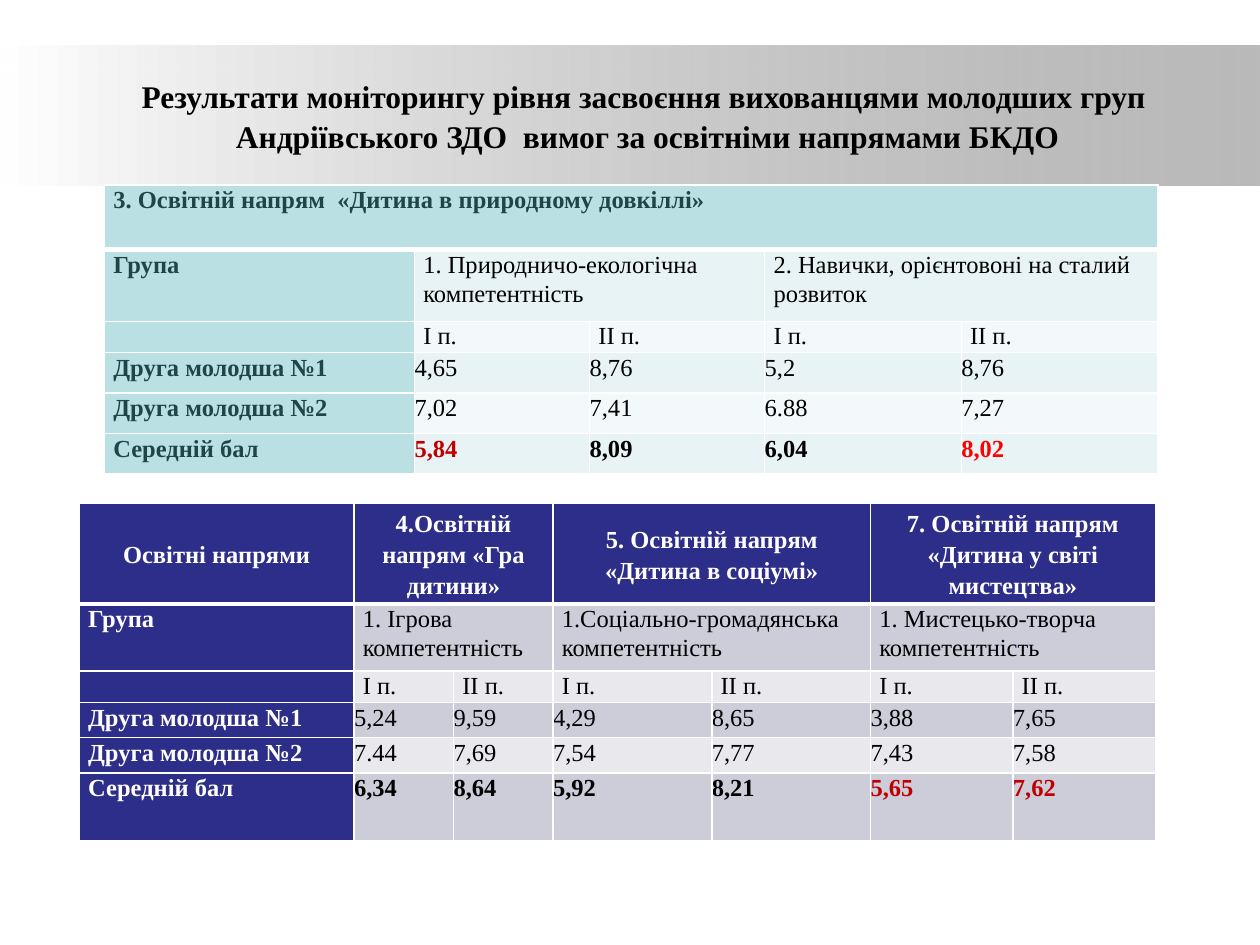
from dataclasses import dataclass

import pptx
import pptx.dml.color
import pptx.enum.shapes
import pptx.enum.text
import pptx.oxml.ns
import pptx.util
from lxml import etree
from pptx.dml.color import RGBColor
from pptx.util import Inches, Pt

FONT = "Times New Roman"
WHITE = RGBColor(0xFF, 0xFF, 0xFF)
BLACK = RGBColor(0x00, 0x00, 0x00)
GRAY = RGBColor(0x80, 0x80, 0x80)
DARK_RED = RGBColor(0xC0, 0x00, 0x00)
RED = RGBColor(0xFF, 0x00, 0x00)
TEAL = RGBColor(0xBB, 0xE0, 0xE3)
DARK_TEAL = RGBColor(0x1E, 0x46, 0x49)
NAVY = RGBColor(0x2D, 0x2D, 0x8A)

TITLE = ("Результати моніторингу рівня засвоєння вихованцями молодших груп \v"
         "Андріївського ЗДО  вимог за освітніми напрямами БКДО")
TERMS = ["І п.", "ІІ п."]
FIRST_GROUP, SECOND_GROUP, AVERAGE = "Друга молодша №1", "Друга молодша №2", "Середній бал"
FIRST_SCORE_ROW = 3

# None continues the cell to its left
NATURE_ROWS = [
    ["3. Освітній напрям  «Дитина в природному довкіллі»", None, None, None, None],
    ["Група", "1. Природничо-екологічна  компетентність", None,
     "2. Навички, орієнтовоні на сталий розвиток", None],
    ["", *TERMS * 2],
    [FIRST_GROUP, "4,65", "8,76", "5,2", "8,76"],
    [SECOND_GROUP, "7,02", "7,41", "6.88", "7,27"],
    [AVERAGE, "5,84", "8,09", "6,04", "8,02"],
]
AREAS_ROWS = [
    ["Освітні напрями", "4.Освітній напрям «Гра дитини»", None,
     "5. Освітній напрям «Дитина в соціумі»", None,
     "7. Освітній напрям «Дитина у світі мистецтва»", None],
    ["Група", "1. Ігрова  компетентність", None,
     "1.Соціально-громадянська компетентність", None,
     "1. Мистецько-творча компетентність", None],
    ["", *TERMS * 3],
    [FIRST_GROUP, "5,24", "9,59", "4,29", "8,65", "3,88", "7,65"],
    [SECOND_GROUP, "7.44", "7,69", "7,54", "7,77", "7,43", "7,58"],
    [AVERAGE, "6,34", "8,64", "5,92", "8,21", "5,65", "7,62"],
]


@dataclass
class Palette:
    heading: RGBColor
    heading_text: RGBColor
    bands: tuple
    average_colors: dict  # column -> highlighted average


NATURE_PALETTE = Palette(TEAL, DARK_TEAL,
                         (RGBColor(0xF3, 0xF9, 0xFA), RGBColor(0xE7, 0xF3, 0xF4)),
                         {1: DARK_RED, 4: RED})
AREAS_PALETTE = Palette(NAVY, WHITE,
                        (RGBColor(0xE8, 0xE8, 0xED), RGBColor(0xCD, 0xCD, 0xDA)),
                        {5: DARK_RED, 6: DARK_RED})


def add_title_band(slide):
    band = slide.shapes.add_shape(pptx.enum.shapes.MSO_SHAPE.RECTANGLE,
                                  0, Inches(0.36), Inches(10), Inches(1.11))
    band.shadow.inherit = False
    band.line.fill.background()
    band.fill.gradient()
    band.fill.gradient_angle = 0
    for stop, color in zip(band.fill.gradient_stops, (WHITE, GRAY)):
        stop.color.rgb = color
    # The gray end is partly transparent
    gray_end = band._element.spPr.findall(".//" + pptx.oxml.ns.qn("a:srgbClr"))[-1]
    etree.SubElement(gray_end, pptx.oxml.ns.qn("a:alpha"), val="54000")


def style_paragraph(paragraph, size, color, bold, line_spacing=1.07, space_after=8):
    paragraph.line_spacing = line_spacing
    paragraph.space_after = Pt(space_after)
    font = paragraph.font
    font.name, font.size, font.bold = FONT, Pt(size), bold
    font.color.rgb = color


def add_title(slide):
    title = slide.shapes.add_textbox(Inches(0.28), Inches(0.44), Inches(9.72), Inches(0.94))
    frame = title.text_frame
    frame.word_wrap = True
    frame.vertical_anchor = pptx.enum.text.MSO_ANCHOR.MIDDLE
    frame.text = TITLE
    frame.paragraphs[0].alignment = pptx.enum.text.PP_ALIGN.CENTER
    style_paragraph(frame.paragraphs[0], 18, BLACK, True)


def set_borders(cell, row):
    """White grid, with a thicker line under the heading row."""
    widths = {"L": 1, "R": 1, "T": 3 if row == 1 else 1, "B": 3 if row == 0 else 1}
    properties = cell._tc.get_or_add_tcPr()
    for index, (side, width) in enumerate(widths.items()):
        line = etree.Element(pptx.oxml.ns.qn("a:ln" + side), w=str(Pt(width)))
        fill = etree.SubElement(line, pptx.oxml.ns.qn("a:solidFill"))
        etree.SubElement(fill, pptx.oxml.ns.qn("a:srgbClr"), val=str(WHITE))
        properties.insert(index, line)


def fill_cell(cell, text, row, column, palette, is_last, centered_heading):
    is_heading = row == 0 or column == 0
    is_score = row >= FIRST_SCORE_ROW and column > 0
    cell.margin_top = cell.margin_bottom = 0
    cell.margin_left = cell.margin_right = 0 if is_score else Inches(0.07)
    cell.fill.solid()
    cell.fill.fore_color.rgb = palette.heading if is_heading else palette.bands[row % 2]
    set_borders(cell, row)

    if not text:
        cell.text_frame.paragraphs[0]._p.get_or_add_endParaRPr().set("sz", "1400")
        return
    cell.text = text
    paragraph = cell.text_frame.paragraphs[0]
    color = palette.heading_text if is_heading else BLACK
    if is_last:
        color = palette.average_colors.get(column, color)
    centered = centered_heading and row == 0
    style_paragraph(paragraph, 14, color, is_heading or is_last,
                    1.15 if centered else 1.07, 0 if is_score else 8)
    if centered:
        paragraph.alignment = pptx.enum.text.PP_ALIGN.CENTER
        cell.vertical_anchor = pptx.enum.text.MSO_ANCHOR.MIDDLE


def add_score_table(slide, left, top, widths, heights, rows, palette, centered_heading=False):
    table = slide.shapes.add_table(len(rows), len(widths), Inches(left), Inches(top),
                                   Inches(sum(widths)), Inches(sum(heights))).table
    table.first_row = table.horz_banding = False
    for column, width in zip(table.columns, widths):
        column.width = Inches(width)
    for table_row, height in zip(table.rows, heights):
        table_row.height = Inches(height)

    for r, texts in enumerate(rows):
        for c, text in enumerate(texts):
            fill_cell(table.cell(r, c), text, r, c, palette,
                      r == len(rows) - 1, centered_heading)
        # Join each text with the continuation cells after it
        starts = [c for c, text in enumerate(texts) if text is not None]
        for start, end in zip(starts, starts[1:] + [len(texts)]):
            if end - start > 1:
                table.cell(r, start).merge(table.cell(r, end - 1))


def main():
    presentation = pptx.Presentation()
    presentation.slide_width, presentation.slide_height = Inches(10), Inches(7.5)
    slide = presentation.slides.add_slide(presentation.slide_layouts[6])

    # Heading
    add_title_band(slide)
    add_title(slide)

    # Monitoring results
    add_score_table(slide, 0.83, 1.47, [2.46, 1.39, 1.39, 1.56, 1.56],
                    [0.51, 0.57, 0.25, 0.32, 0.32, 0.32], NATURE_ROWS, NATURE_PALETTE)
    add_score_table(slide, 0.63, 3.99, [2.18, 0.79, 0.79, 1.26, 1.26, 1.13, 1.13],
                    [0.8, 0.53, 0.25, 0.28, 0.28, 0.54], AREAS_ROWS, AREAS_PALETTE,
                    centered_heading=True)

    presentation.save("out.pptx")


if __name__ == "__main__":
    main()
